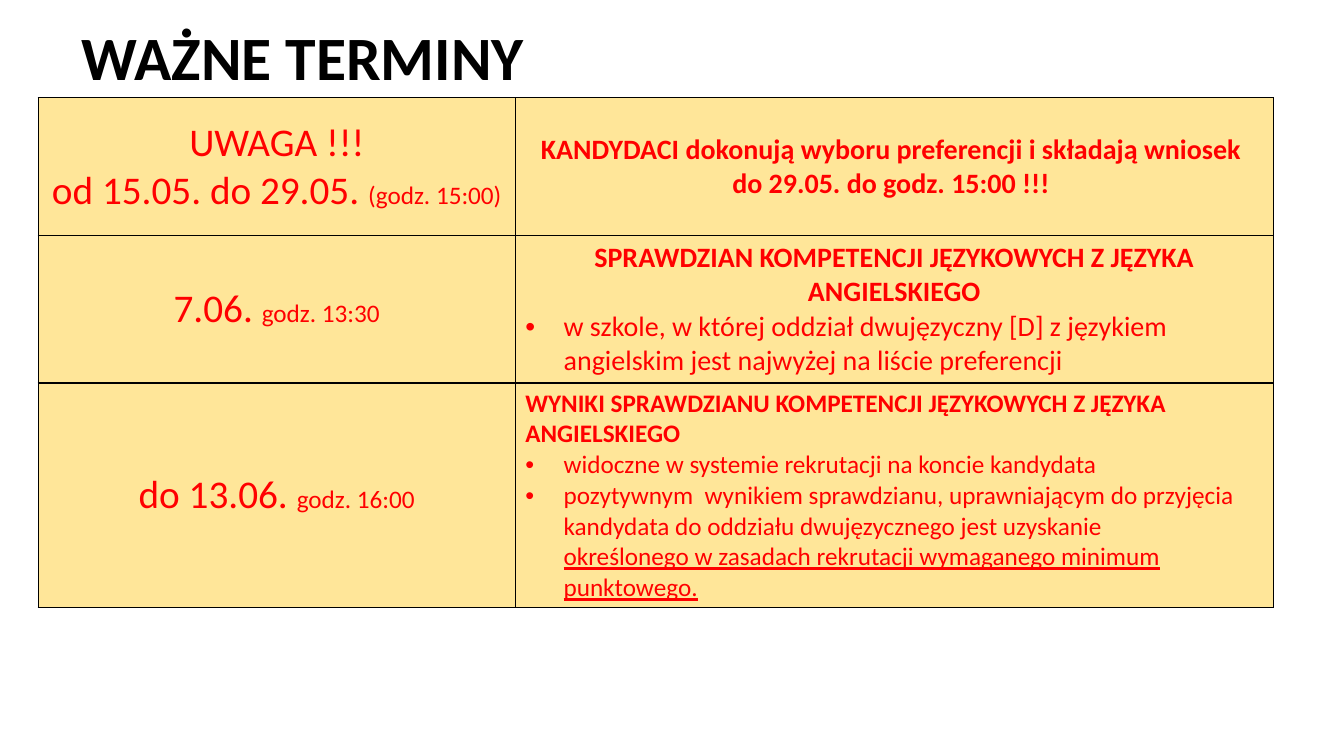
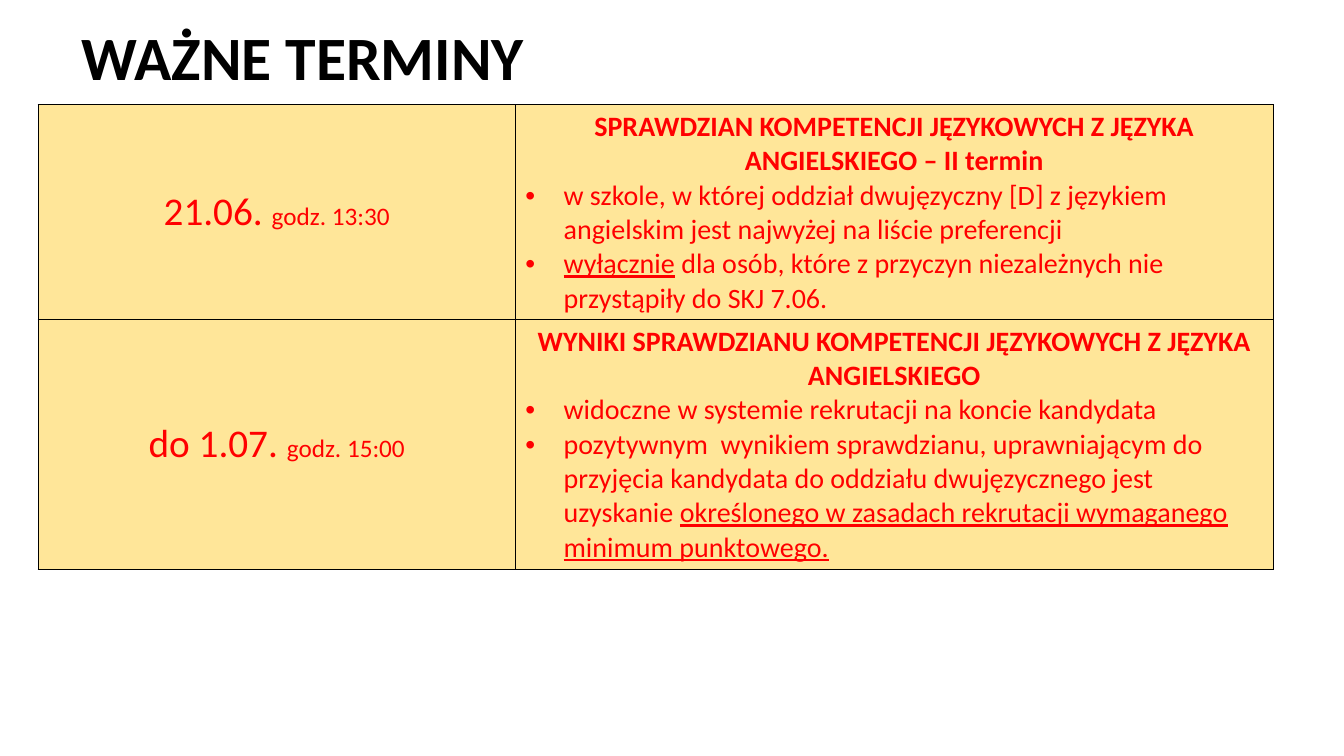
from dataclasses import dataclass

from lxml import etree
from pptx import Presentation
from pptx.dml.color import RGBColor
from pptx.enum.text import MSO_ANCHOR, PP_ALIGN
from pptx.oxml.ns import qn
from pptx.util import Inches, Pt

CENTER, LEFT = PP_ALIGN.CENTER, PP_ALIGN.LEFT
TOP, MIDDLE = MSO_ANCHOR.TOP, MSO_ANCHOR.MIDDLE


@dataclass(frozen=True)
class Theme:
    font: str = "Calibri"
    ink: str = "000000"
    accent: str = "FF0000"
    cell: str = "FFE699"
    title: int = 44
    date: int = 28
    body: int = 20
    small: int = 18


T = Theme()
TITLE = "WAŻNE TERMINY"
TABLE_LEFT, COLUMNS = 0.38, (4.73, 7.52)
INDENT = 0.38

TEST = "SPRAWDZIAN KOMPETENCJI JĘZYKOWYCH Z JĘZYKA ANGIELSKIEGO"
RESULTS = "WYNIKI SPRAWDZIANU KOMPETENCJI JĘZYKOWYCH Z JĘZYKA ANGIELSKIEGO"
WHERE = "w szkole, w której oddział dwujęzyczny [D] z językiem angielskim jest najwyżej na liście preferencji"
VISIBLE = "widoczne w systemie rekrutacji na koncie kandydata"
PASSING = ("pozytywnym  wynikiem sprawdzianu, uprawniającym do przyjęcia kandydata "
           "do oddziału dwujęzycznego jest uzyskanie ")
MINIMUM = "określonego w zasadach rekrutacji wymaganego minimum punktowego."

SLIDES = [
    dict(top=0.97, rows=[
        dict(height=1.37, dates=[("UWAGA !!!", ""), ("od 15.05. do 29.05. ", "(godz. 15:00)")],
             heading="KANDYDACI dokonują wyboru preferencji i składają wniosek \ndo 29.05. do godz. 15:00 !!! ",
             anchor=MIDDLE),
        dict(height=1.46, dates=[("7.06. ", "godz. 13:30")], heading=TEST,
             bullets=[[(WHERE, False)]]),
        dict(height=2.23, dates=[("do 13.06. ", "godz. 16:00")], heading=RESULTS,
             bullets=[[(VISIBLE, False)], [(PASSING + "\n", False), (MINIMUM, True)]],
             size=T.small, align=LEFT),
    ]),
    dict(top=1.04, rows=[
        dict(height=2.13, dates=[("21.06. ", "godz. 13:30")], heading=TEST + " – II termin",
             bullets=[[(WHERE, False)],
                      [("wyłącznie", True),
                       (" dla osób, które z przyczyn niezależnych nie przystąpiły do SKJ 7.06.", False)]]),
        dict(height=2.48, dates=[("do 1.07. ", "godz. 15:00")], heading=RESULTS,
             bullets=[[(VISIBLE, False)], [(PASSING, False), (MINIMUM, True)]]),
    ]),
]


def next_paragraph(tf):
    p = tf.paragraphs[0]
    return tf.add_paragraph() if p.runs else p


def style(p, size, color=T.accent, bold=False, align=LEFT):
    p.alignment = align
    f = p.font
    f.name, f.size, f.bold = T.font, Pt(size), bold
    f.color.rgb = RGBColor.from_string(color)


def add_text(p, text, size=None, underline=False):
    for i, line in enumerate(text.split("\n")):
        if i:
            p.add_line_break()
        if line:
            r = p.add_run()
            r.text = line
            if size:
                r.font.size = Pt(size)
            if underline:
                r.font.underline = True


def add_bullet(p):
    pPr = p._p.get_or_add_pPr()
    pPr.set("marL", str(Inches(INDENT)))
    pPr.set("indent", str(-Inches(INDENT)))
    bullet = etree.Element(qn("a:buChar"), char="•")
    font = etree.Element(qn("a:buFont"), typeface="Arial")
    defaults = pPr.find(qn("a:defRPr"))
    defaults.addprevious(font)
    defaults.addprevious(bullet)


def add_borders(cell):
    tcPr = cell._tc.get_or_add_tcPr()
    for i, side in enumerate(("lnL", "lnR", "lnT", "lnB")):
        ln = etree.Element(qn("a:" + side), w=str(Pt(1)))
        fill = etree.SubElement(ln, qn("a:solidFill"))
        etree.SubElement(fill, qn("a:srgbClr"), val=T.ink)
        tcPr.insert(i, ln)


def fill_dates(tf, dates):
    for day, hour in dates:
        p = next_paragraph(tf)
        style(p, T.date, align=CENTER)
        add_text(p, day)
        add_text(p, hour, T.small)


def fill_details(tf, row):
    size = row.get("size", T.body)
    p = next_paragraph(tf)
    style(p, size, bold=True, align=row.get("align", CENTER))
    add_text(p, row["heading"])
    for runs in row.get("bullets", []):
        p = next_paragraph(tf)
        style(p, size)
        add_bullet(p)
        for text, underline in runs:
            add_text(p, text, underline=underline)


def add_title(s):
    tf = s.shapes.add_textbox(Inches(0.71), Inches(0.22), Inches(11.5), Inches(1.45)).text_frame
    tf.word_wrap = True
    p = tf.paragraphs[0]
    style(p, T.title, T.ink, bold=True)
    p.line_spacing = 0.9
    add_text(p, TITLE)


def add_schedule(s, top, rows):
    height = sum(row["height"] for row in rows)
    table = s.shapes.add_table(len(rows), len(COLUMNS), Inches(TABLE_LEFT), Inches(top),
                               Inches(sum(COLUMNS)), Inches(height)).table
    table.first_row = table.horz_banding = False
    for column, width in zip(table.columns, COLUMNS):
        column.width = Inches(width)
    for i, row in enumerate(rows):
        table.rows[i].height = Inches(row["height"])
        date, details = table.cell(i, 0), table.cell(i, 1)
        for cell in (date, details):
            cell.fill.solid()
            cell.fill.fore_color.rgb = RGBColor.from_string(T.cell)
            add_borders(cell)
        date.vertical_anchor = MIDDLE
        details.vertical_anchor = row.get("anchor", TOP)
        fill_dates(date.text_frame, row["dates"])
        fill_details(details.text_frame, row)


def main():
    prs = Presentation()
    prs.slide_width, prs.slide_height = Inches(13.33), Inches(7.5)
    for content in SLIDES:
        s = prs.slides.add_slide(prs.slide_layouts[6])
        add_title(s)
        add_schedule(s, **content)
    prs.save("out.pptx")


if __name__ == "__main__":
    main()
